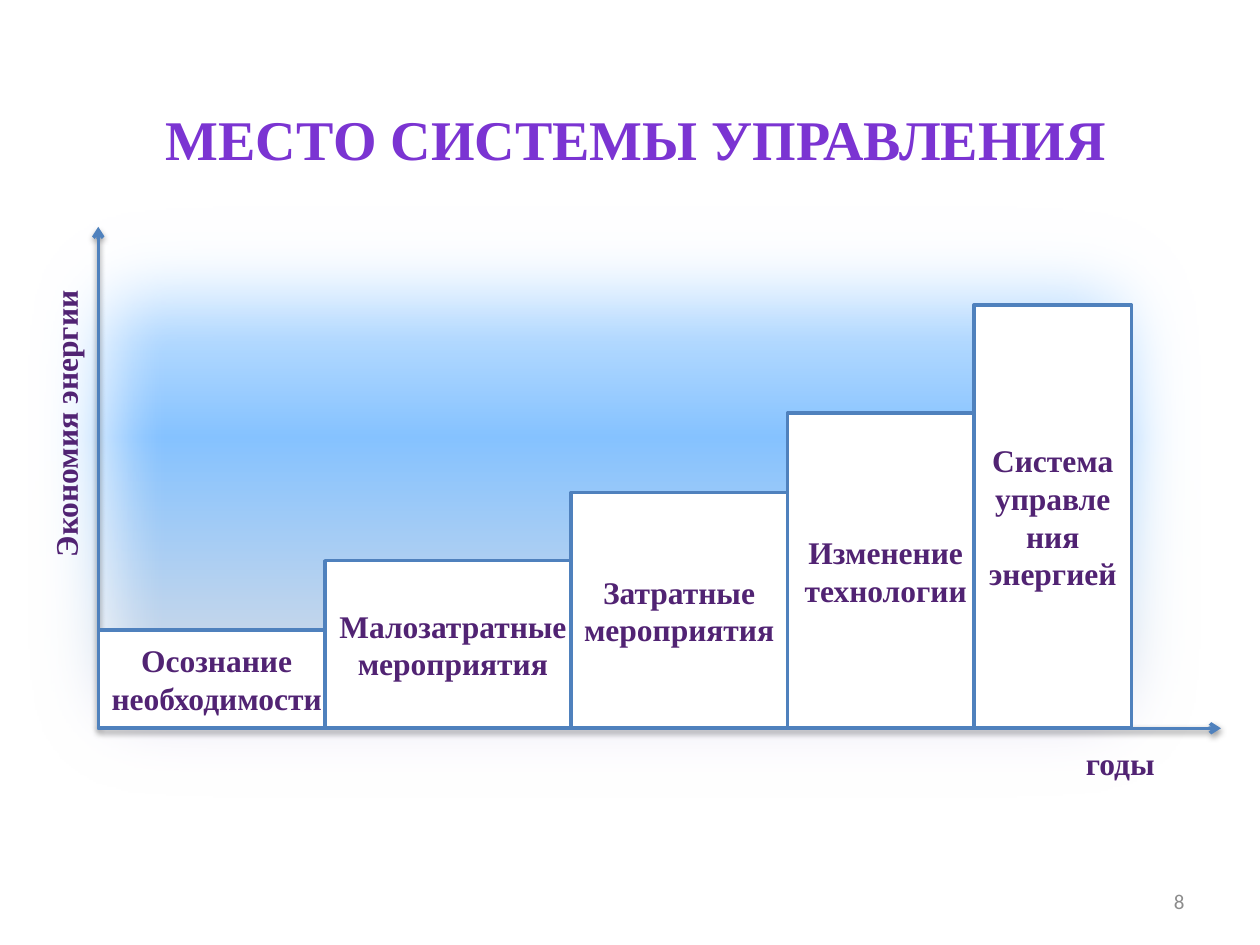
import pptx
import pptx.util
import pptx.dml.color
import pptx.enum.shapes
import pptx.enum.text
import pptx.oxml
import pptx.oxml.ns

TITLE = "МЕСТО СИСТЕМЫ УПРАВЛЕНИЯ"
STEPS = [
    ("Осознание необходимости", 0.78, 1.88, 0.78),
    ("Малозатратные мероприятия", 2.58, 2.03, 1.33),
    ("Затратные мероприятия", 4.53, 1.72, 1.87),
    ("Изменение технологии", 6.25, 1.56, 2.5),
    ("Система управления энергией", 7.73, 1.25, 3.36),
]
AXIS_LABELS = [
    ("Экономия энергии", (-0.65, 3.15, 2.34, 0.4), 270),
    ("годы", (8.52, 5.86, 0.75, 0.4), 0),
]
PAGE = "8"
SKY = [(0, "FFFFFF"), (40, "85C2FF"), (70, "C4D6EB"), (100, "FFEBFA")]
ORIGIN = (0.78, 5.78)
AXIS_ENDS = [(ORIGIN[0], 1.8), (9.69, ORIGIN[1])]
BLUE, PLUM, VIOLET, GRAY = "4F81BD", "512373", "7B34D2", "8C8C8C"
SERIF = "Times New Roman"
ALIGN = pptx.enum.text.PP_ALIGN
MIDDLE = pptx.enum.text.MSO_ANCHOR.MIDDLE
RECTANGLE = pptx.enum.shapes.MSO_SHAPE.RECTANGLE


def rgb(code):
    return pptx.dml.color.RGBColor.from_string(code)


def inches(*values):
    return [pptx.util.Inches(value) for value in values]


def element(xml):
    head, rest = xml.split(">", 1) if not xml.split(">", 1)[0].endswith("/") else (xml[:-2], None)
    names = pptx.oxml.ns.nsdecls("a")
    return pptx.oxml.parse_xml(f"{head} {names}/>" if rest is None else f"{head} {names}>{rest}")


def write(frame, text, size, color, align, font=SERIF, bold=True):
    frame.text = text
    paragraph = frame.paragraphs[0]
    paragraph.alignment = align
    paragraph.font.name = font
    paragraph.font.size = pptx.util.Pt(size)
    paragraph.font.bold = bold
    paragraph.font.color.rgb = rgb(color)


def add_sky(slide):
    sky = slide.shapes.add_shape(RECTANGLE, *inches(0, 1.41, 9.77, 5.16))
    sky.line.fill.background()
    sky.fill.gradient()
    sky.fill.gradient_angle = 270
    stops = "".join(
        f'<a:gs pos="{share * 1000}"><a:srgbClr val="{color}"/></a:gs>' for share, color in SKY
    )
    properties = sky.fill._xPr
    old_stops = properties.find(".//" + pptx.oxml.ns.qn("a:gsLst"))
    old_stops.getparent().replace(old_stops, element(f"<a:gsLst>{stops}</a:gsLst>"))
    properties.append(element('<a:effectLst><a:softEdge rad="635000"/></a:effectLst>'))


def add_axis(slide, end):
    axis = slide.shapes.add_connector(
        pptx.enum.shapes.MSO_CONNECTOR.STRAIGHT, *inches(*ORIGIN, *end)
    )
    axis.line.color.rgb = rgb(BLUE)
    axis.line.width = pptx.util.Pt(2)
    axis.line._get_or_add_ln().append(element('<a:tailEnd type="arrow"/>'))
    axis._element.spPr.append(element(
        '<a:effectLst><a:outerShdw blurRad="40000" dist="20000" dir="5400000" rotWithShape="0">'
        '<a:srgbClr val="000000"><a:alpha val="38000"/></a:srgbClr></a:outerShdw></a:effectLst>'
    ))


def add_step(slide, text, left, width, height):
    step = slide.shapes.add_shape(RECTANGLE, *inches(left, ORIGIN[1] - height, width, height))
    step.shadow.inherit = False
    step.fill.solid()
    step.fill.fore_color.rgb = rgb("FFFFFF")
    step.line.color.rgb = rgb(BLUE)
    step.line.width = pptx.util.Pt(2)
    step.text_frame.vertical_anchor = MIDDLE
    write(step.text_frame, text, 18, PLUM, ALIGN.CENTER)


def main():
    deck = pptx.Presentation()
    deck.slide_width, deck.slide_height = inches(10, 7.5)
    slide = deck.slides.add_slide(deck.slide_layouts[5])

    title = slide.shapes.title
    title.left, title.top, title.width, title.height = inches(0.55, 0.47, 9, 1.25)
    title.text_frame.vertical_anchor = MIDDLE
    write(title.text_frame, TITLE, 32, VIOLET, ALIGN.CENTER)

    add_sky(slide)
    slide.shapes._spTree.append(title._element)

    page = slide.shapes.add_textbox(*inches(7.17, 6.95, 2.33, 0.4)).text_frame
    page.word_wrap = True
    page.vertical_anchor = MIDDLE
    write(page, PAGE, 12, GRAY, ALIGN.RIGHT, "Calibri", False)

    for end in AXIS_ENDS:
        add_axis(slide, end)
    for step in STEPS:
        add_step(slide, *step)
    for text, place, rotation in AXIS_LABELS:
        label = slide.shapes.add_textbox(*inches(*place))
        label.rotation = rotation
        label.text_frame.word_wrap = False
        label.text_frame.auto_size = pptx.enum.text.MSO_AUTO_SIZE.SHAPE_TO_FIT_TEXT
        write(label.text_frame, text, 18, PLUM, ALIGN.LEFT)

    deck.save("out.pptx")


if __name__ == "__main__":
    main()
